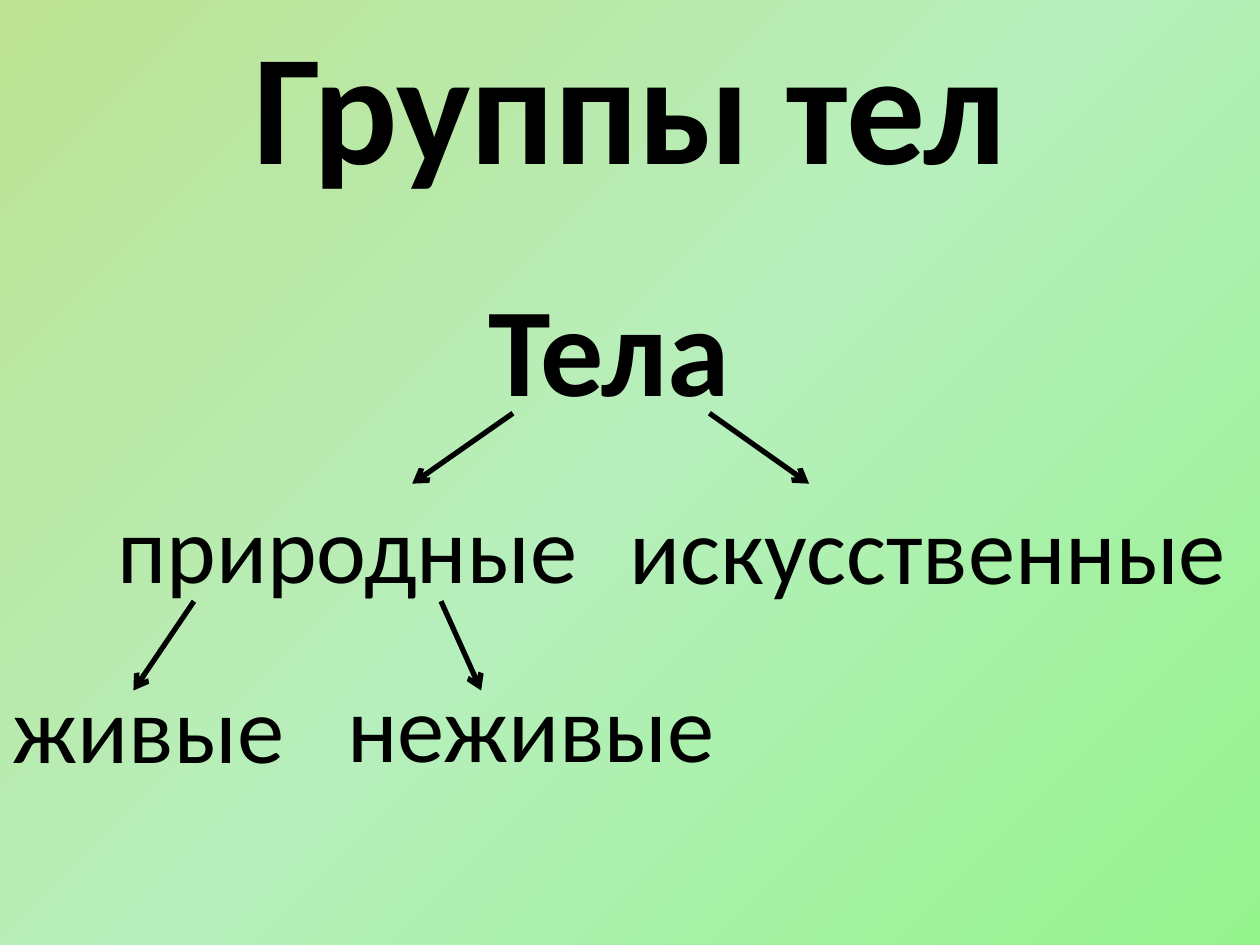
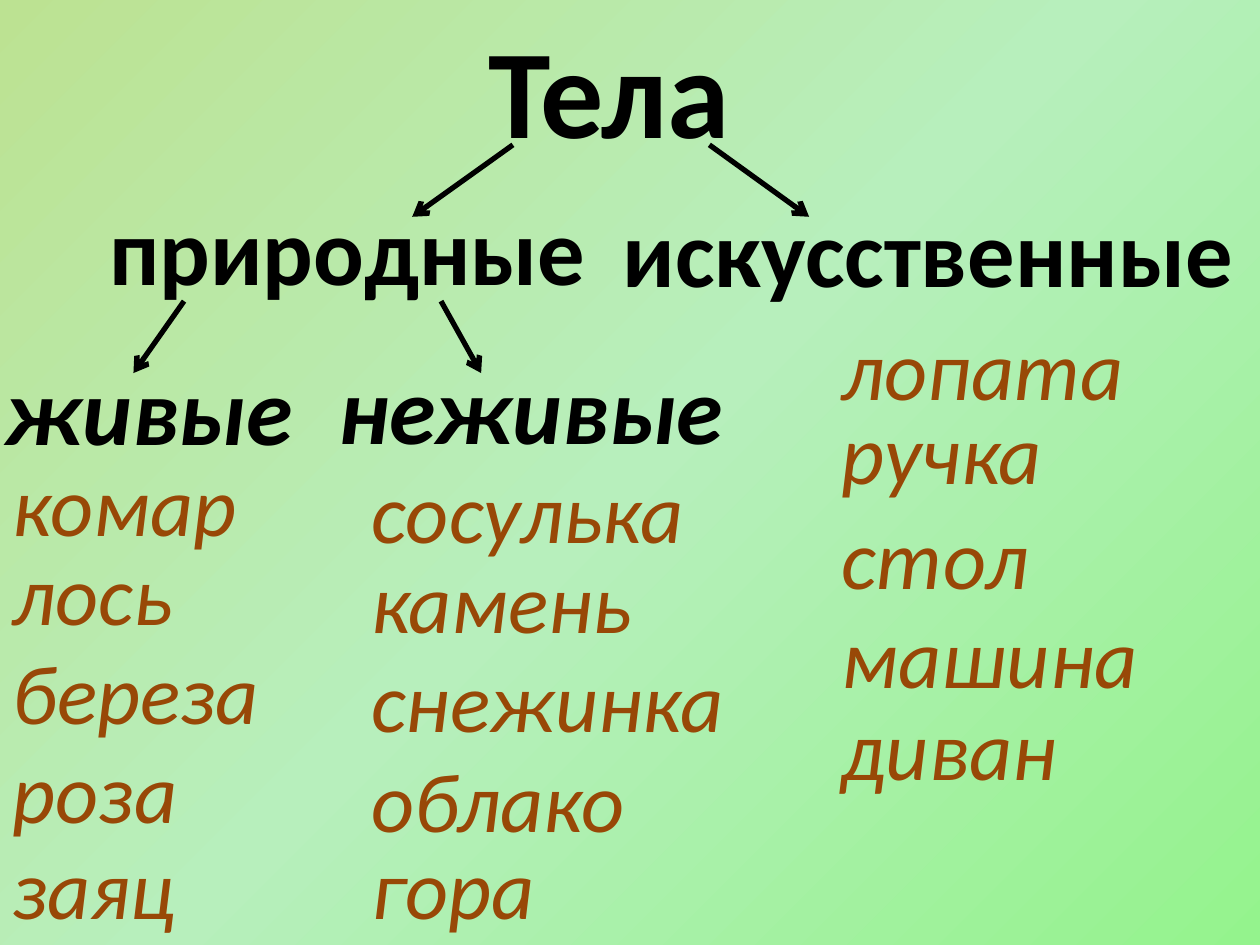
import pptx
import pptx.dml.color
import pptx.enum.shapes
import pptx.enum.text
import pptx.oxml
import pptx.oxml.ns
import pptx.util
import lxml.etree

Cm = pptx.util.Cm
CENTER = pptx.enum.text.PP_ALIGN.CENTER
LEFT = pptx.enum.text.PP_ALIGN.LEFT
TOP = pptx.enum.text.MSO_ANCHOR.TOP
MIDDLE = pptx.enum.text.MSO_ANCHOR.MIDDLE
qn = pptx.oxml.ns.qn
BLACK = "000000"
BROWN = "984807"


def color(value):
    return pptx.dml.color.RGBColor.from_string(value)


def write(shape, box, text, size, bold=False, italic=False, ink=BLACK,
          align=CENTER, anchor=TOP, before=20):
    shape.left, shape.top, shape.width, shape.height = [Cm(length) for length in box]
    frame = shape.text_frame
    frame.text = text
    frame.word_wrap = True
    frame.auto_size = pptx.enum.text.MSO_AUTO_SIZE.NONE
    frame.vertical_anchor = anchor
    paragraph = frame.paragraphs[0]
    paragraph.alignment = align
    spacing = lxml.etree.SubElement(paragraph._p.get_or_add_pPr(), qn("a:spcBef"))
    lxml.etree.SubElement(spacing, qn("a:spcPct"), val=str(before * 1000))
    font = paragraph.runs[0].font
    font.name = "Calibri"
    font.size = pptx.util.Pt(size)
    font.bold = bold
    font.italic = italic
    font.color.rgb = color(ink)


deck = pptx.Presentation()
deck.slide_width, deck.slide_height = Cm(25.4), Cm(19.05)

master = deck.slide_master
master.background.fill.solid()
plain_fill = master._element.find(".//" + qn("p:bgPr")).find(qn("a:solidFill"))
stops = "".join(
    f'<a:gs pos="{place * 1000}"><a:srgbClr val="{green}"/></a:gs>'
    for place, green in [(0, "BCE292"), (50, "B7EFBC"), (100, "94F38D")])
meadow = pptx.oxml.parse_xml(
    '<a:gradFill xmlns:a="http://schemas.openxmlformats.org/drawingml/2006/main">'
    f'<a:gsLst>{stops}</a:gsLst>'
    '<a:path path="circle"><a:fillToRect r="100000" b="100000"/></a:path></a:gradFill>')
plain_fill.getparent().replace(plain_fill, meadow)

schemes = [
    dict(root=5.33, kinds=9.73, natural=13.34, upper=(8.33, 9.75),
         lower=(12.12, 13.92), living_start=3.91, bold=False),
    dict(root=0.13, kinds=3.73, natural=6.93, upper=(2.92, 4.37),
         lower=(6.07, 7.52), living_start=3.71, bold=True),
]

for scheme in schemes:
    slide = deck.slides.add_slide(deck.slide_layouts[0])
    heading, natural_kind = slide.placeholders
    bold = scheme["bold"]
    if bold:
        root = heading
    else:
        write(heading, (1.9, 0, 21.6, 4.09), "Группы тел", 90, True,
              anchor=MIDDLE, before=0)
        root = slide.shapes.add_textbox(0, 0, 0, 0)
    write(root, (3.91, scheme["root"], 16.74, 3), "Тела", 72, True)
    write(natural_kind, (0.3, scheme["kinds"], 13.41, 2.34), "природные", 54, bold)

    branches = [
        ("искусственные", 10.34, scheme["kinds"] + 0.03, 16.74, 3, False),
        ("живые", -3.71, scheme["natural"] + 0.03, 13.41, 2.34, bold),
        ("неживые", 5.51, scheme["natural"], 10.39, 2.34, bold),
    ]
    for word, left, top, width, height, italic in branches:
        write(slide.shapes.add_textbox(0, 0, 0, 0), (left, top, width, height),
              word, 54, bold, italic)

    arrows = [
        (10.34, 8.31, scheme["upper"]),
        (14.3, 16.31, scheme["upper"]),
        (scheme["living_start"], 2.69, scheme["lower"]),
        (8.89, 9.7, scheme["lower"]),
    ]
    for start, end, (top, bottom) in arrows:
        arrow = slide.shapes.add_connector(
            pptx.enum.shapes.MSO_CONNECTOR.STRAIGHT,
            Cm(start), Cm(top), Cm(end), Cm(bottom))
        arrow.line.color.rgb = color(BLACK)
        arrow.line.width = pptx.util.Pt(3)
        lxml.etree.SubElement(arrow.line._get_or_add_ln(), qn("a:tailEnd"), type="arrow")
        lxml.etree.SubElement(arrow._element.spPr, qn("a:effectLst"))

examples = [
    (0, [("комар", 8.99), ("лось", 10.8), ("береза", 12.78),
         ("роза", 14.78), ("заяц", 16.71)]),
    (7.23, [("сосулька", 9.14), ("камень", 10.95), ("снежинка", 12.95),
            ("облако", 14.96), ("гора", 16.71)]),
    (16.72, [("лопата", 6.25), ("ручка", 7.95), ("стол", 10.06),
             ("машина", 12.07), ("диван", 13.92)]),
]
for left, words in examples:
    for word, top in words:
        write(slide.shapes.add_textbox(0, 0, 0, 0), (left, top, 13.41, 2.34),
              word, 48, italic=True, ink=BROWN, align=LEFT)

deck.save("out.pptx")
